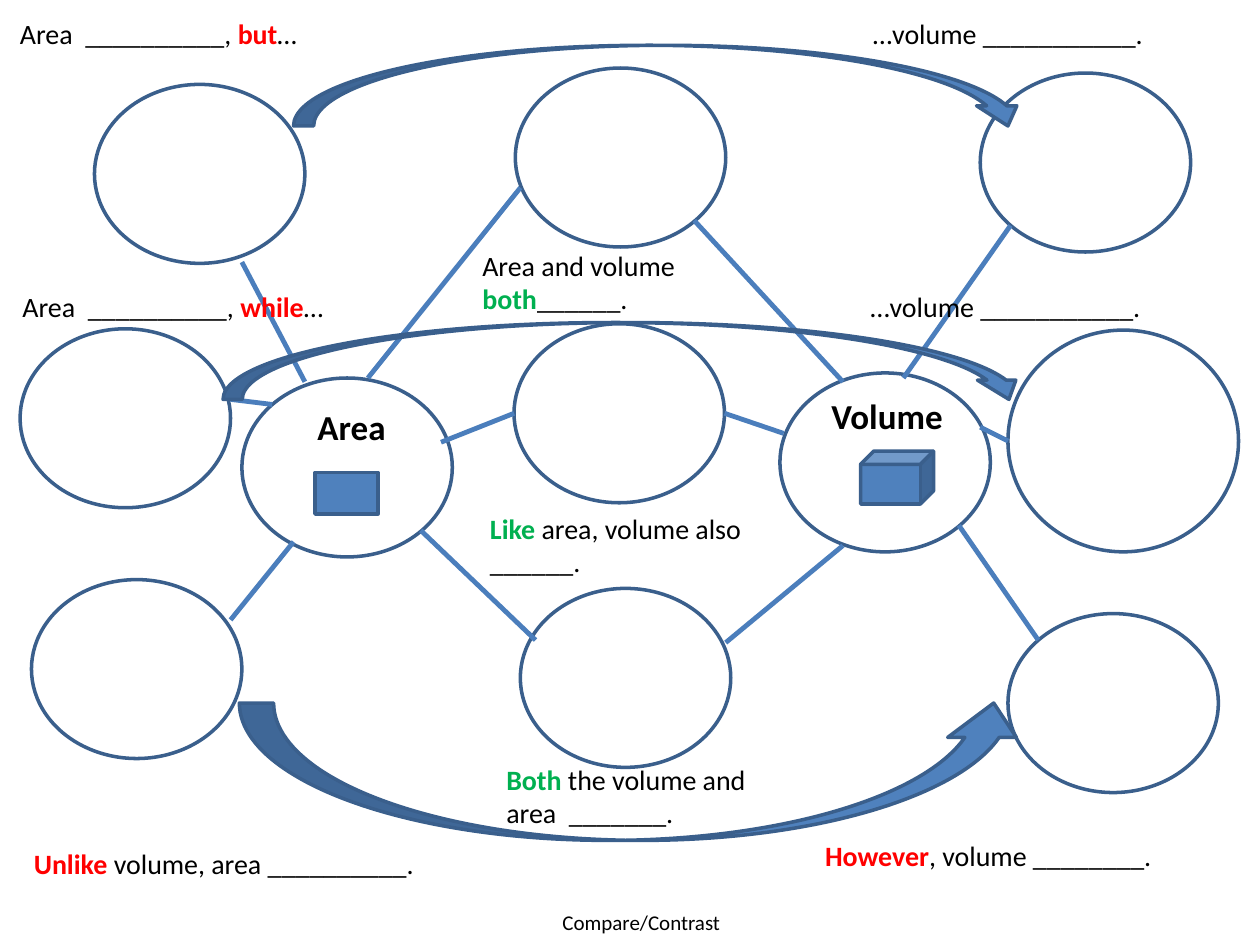
"""Build the area and volume compare/contrast thinking map."""
import pptx
import pptx.dml.color
import pptx.enum.shapes
import pptx.enum.text
import pptx.oxml
import pptx.util

Inches = pptx.util.Inches
SHAPE = pptx.enum.shapes.MSO_SHAPE
ALIGN = pptx.enum.text.PP_ALIGN
COLORS = {"fill": "4F81BD", "outline": "3A5F8C", "link": "4B7EBC",
          "text": "000000", "contrast": "FF0000", "compare": "00B050"}
EFFECTS = ('<a:effectLst xmlns:a='
           '"http://schemas.openxmlformats.org/drawingml/2006/main"/>')


class MapSlide:
    font = "Calibri"

    def __init__(self, slide):
        self.slide = slide

    def color(self, name):
        return pptx.dml.color.RGBColor.from_string(COLORS[name])

    def shape(self, kind, left, top, width, height, filled=True, flip=False):
        shape = self.slide.shapes.add_shape(
            kind, Inches(left), Inches(top), Inches(width), Inches(height))
        shape.shadow.inherit = False
        if filled:
            shape.fill.solid()
            shape.fill.fore_color.rgb = self.color("fill")
        else:
            shape.fill.background()
        shape.line.color.rgb = self.color("outline")
        shape.line.width = pptx.util.Pt(2)
        if flip:
            shape._element.spPr.xfrm.set("flipV", "1")

    def bubble(self, left, top, width=1.67, height=1.42):
        self.shape(SHAPE.OVAL, left, top, width, height, filled=False)

    def link(self, x1, y1, x2, y2):
        link = self.slide.shapes.add_connector(
            pptx.enum.shapes.MSO_CONNECTOR.STRAIGHT,
            Inches(x1), Inches(y1), Inches(x2), Inches(y2))
        link.line.color.rgb = self.color("link")
        link.line.width = pptx.util.Pt(2.75)
        link._element.spPr.append(pptx.oxml.parse_xml(EFFECTS))

    def text(self, left, top, width, height, *runs, size=16, bold=False,
             align=ALIGN.LEFT):
        box = self.slide.shapes.add_textbox(
            Inches(left), Inches(top), Inches(width), Inches(height))
        frame = box.text_frame
        frame.word_wrap = True
        frame.auto_size = pptx.enum.text.MSO_AUTO_SIZE.SHAPE_TO_FIT_TEXT
        paragraph = frame.paragraphs[0]
        paragraph.alignment = align
        paragraph.font.name = self.font
        paragraph.font.size = pptx.util.Pt(size)
        for words, color in runs:
            run = paragraph.add_run()
            run.text = words
            run.font.bold = bold or color != "text"
            run.font.color.rgb = self.color(color)


def main():
    deck = pptx.Presentation()
    deck.slide_width, deck.slide_height = Inches(10), Inches(7.5)
    page = MapSlide(deck.slides.add_slide(deck.slide_layouts[6]))

    for topic, bubble, label in (("Area", (1.92, 3), (2.08, 3.17)),
                                 ("Volume", (6.19, 2.96), (6.33, 3.08))):
        page.bubble(*bubble)
        page.text(*label, 1.42, 0.44, (topic, "text"), size=20, bold=True,
                  align=ALIGN.CENTER)

    shared = [(4.09, 0.54), (4.08, 2.57), (4.13, 4.67)]
    area_only = [(0.75, 0.67), (0.16, 2.61), (0.25, 4.6)]
    volume_only = [(7.78, 0.58), (8, 2.62, 1.83, 1.76), (8, 4.87)]
    for bubble in shared + area_only + volume_only:
        page.bubble(*bubble)

    area_links = [(2.42, 3.03, 1.92, 2.08), (2.92, 3, 4.13, 1.49),
                  (2.16, 3.21, 1.83, 3.17), (2.33, 4.3, 1.83, 4.92),
                  (3.5, 3.51, 4.08, 3.28), (3.34, 4.21, 4.25, 5.08)]
    volume_links = [(6.69, 3.03, 5.51, 1.75), (6.69, 4.33, 5.76, 5.1),
                    (6.22, 3.44, 5.75, 3.28), (7.17, 3, 8.02, 1.79),
                    (7.78, 3.39, 8, 3.5), (7.61, 4.17, 8.24, 5.08)]
    for link in area_links + volume_links:
        page.link(*link)

    page.text(3.83, 7.17, 2.52, 0.3, ("Compare/Contrast", "text"), size=12,
              align=ALIGN.CENTER)
    page.text(3.73, 1.92, 2.52, 0.64, ("Area and volume ", "text"),
              ("both", "compare"), ("______.", "text"))
    page.text(3.79, 4.01, 2.38, 0.64, ("Like", "compare"),
              (" area, volume also ______.", "text"))
    page.text(3.92, 6, 2.45, 0.64, ("Both", "compare"),
              (" the volume and area  _______.", "text"))

    page.text(0.06, 0.08, 3.31, 0.37, ("Area  __________, ", "text"),
              ("but", "contrast"), ("…", "text"))
    page.shape(SHAPE.CURVED_DOWN_ARROW, 2.33, 0.36, 5.83, 0.64)
    page.text(0.03, 2.25, 3.55, 0.37, (" Area  __________, ", "text"),
              ("while", "contrast"), ("…", "text"))
    for left, top in ((6.83, 0.08), (6.81, 2.25)):
        page.text(left, top, 3.31, 0.37, ("…volume ___________.", "text"))
    page.shape(SHAPE.CURVED_DOWN_ARROW, 1.77, 2.56, 6.39, 0.61)
    page.shape(SHAPE.CURVED_DOWN_ARROW, 1.9, 5.58, 6.26, 1.09, flip=True)
    page.text(0.17, 6.67, 3.55, 0.37, ("Unlike", "contrast"),
              (" volume, area __________.", "text"))
    page.text(6.45, 6.61, 3.55, 0.37, ("However", "contrast"),
              (", volume ________.", "text"))

    page.shape(SHAPE.RECTANGLE, 2.5, 3.75, 0.5, 0.33)
    page.shape(SHAPE.CUBE, 6.83, 3.58, 0.58, 0.42)
    deck.save("out.pptx")


if __name__ == "__main__":
    main()
